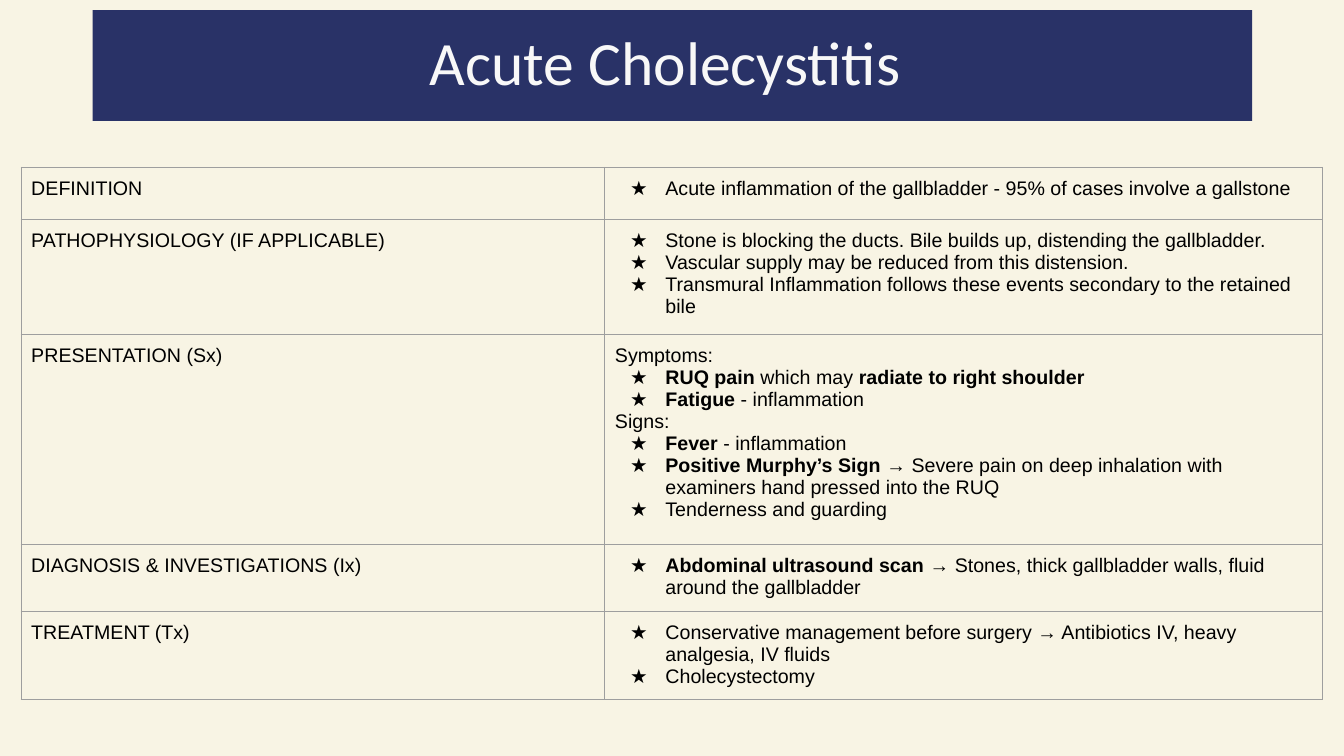
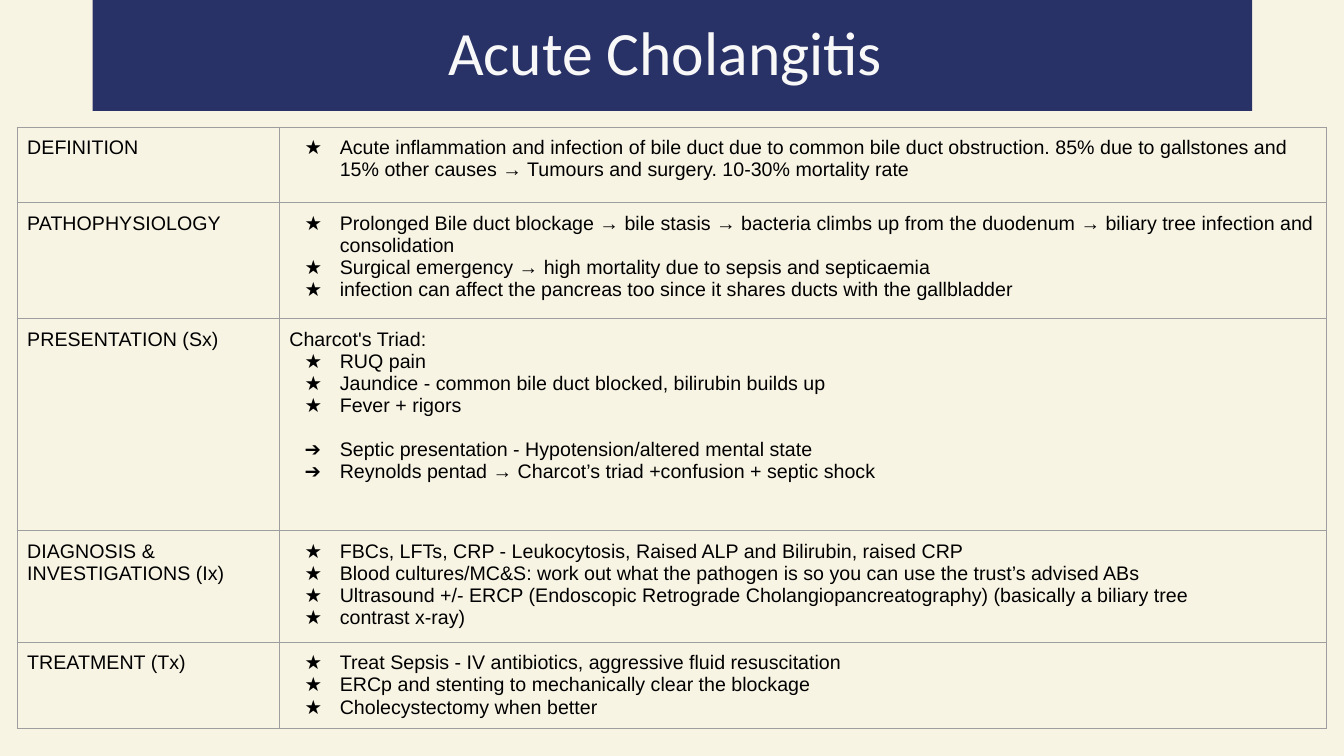
from lxml import etree
from pptx import Presentation
from pptx.dml.color import RGBColor
from pptx.enum.shapes import MSO_SHAPE
from pptx.enum.text import MSO_ANCHOR, PP_ALIGN
from pptx.oxml.ns import qn
from pptx.util import Inches, Pt

CREAM = RGBColor(0xF8, 0xF4, 0xE4)
NAVY = RGBColor(0x29, 0x32, 0x67)
OFF_WHITE = RGBColor(0xF8, 0xF8, 0xF8)
BLACK = RGBColor(0, 0, 0)
GREY = RGBColor(0x9E, 0x9E, 0x9E)

RECTANGLE = MSO_SHAPE.RECTANGLE
MIDDLE = MSO_ANCHOR.MIDDLE
CENTER = PP_ALIGN.CENTER
LEFT = PP_ALIGN.LEFT

PLAIN, STAR, ARROW = "", "★", "➔"
BOLD_MARK = "**"
GROUP_GAP = 16
BORDER_TAGS = ("a:lnL", "a:lnR", "a:lnT", "a:lnB")

CONDITIONS = [
    {
        "title": "Acute Cholecystitis ",
        "band_top": 0.1,
        "table_at": (0.21, 1.66),
        "columns": (5.79, 7.12),
        "rows": [
            (0.52, "DEFINITION", [
                (STAR, "Acute inflammation of the gallbladder - 95% of cases involve a gallstone"),
            ]),
            (1.14, "PATHOPHYSIOLOGY (IF APPLICABLE)", [
                (STAR, "Stone is blocking the ducts. Bile builds up, distending the gallbladder."),
                (STAR, "Vascular supply may be reduced from this distension."),
                (STAR, "Transmural Inflammation follows these events secondary to the retained bile"),
            ]),
            (2.08, "PRESENTATION (Sx)", [
                (PLAIN, "Symptoms:"),
                (STAR, "**RUQ pain** which may **radiate to right shoulder**"),
                (STAR, "**Fatigue** - inflammation"),
                (PLAIN, "Signs:"),
                (STAR, "**Fever** - inflammation"),
                (STAR, "**Positive Murphy’s Sign** → Severe pain on deep inhalation with "
                       "examiners hand pressed into the RUQ"),
                (STAR, "Tenderness and guarding"),
            ]),
            (0.67, "DIAGNOSIS & INVESTIGATIONS (Ix)", [
                (STAR, "**Abdominal ultrasound scan** → Stones, thick gallbladder walls, "
                       "fluid around the gallbladder"),
            ]),
            (0.87, "TREATMENT (Tx)", [
                (STAR, "Conservative management before surgery → Antibiotics IV, "
                       "heavy analgesia, IV fluids"),
                (STAR, "Cholecystectomy"),
            ]),
        ],
    },
    {
        "title": "Acute Cholangitis ",
        "band_top": 0,
        "table_at": (0.17, 1.26),
        "columns": (2.6, 10.39),
        "rows": [
            (0.75, "DEFINITION", [
                (STAR, "Acute inflammation and infection of bile duct due to common bile duct "
                       "obstruction. 85% due to gallstones and 15% other causes → Tumours and "
                       "surgery. 10-30% mortality rate"),
            ]),
            (1.15, "PATHOPHYSIOLOGY", [
                (STAR, "Prolonged Bile duct blockage → bile stasis → bacteria climbs up from "
                       "the duodenum → biliary tree infection and consolidation"),
                (STAR, "Surgical emergency → high mortality due to sepsis and septicaemia"),
                (STAR, "infection can affect the pancreas too since it shares ducts with the gallbladder"),
            ]),
            (2.1, "PRESENTATION (Sx)", [
                (PLAIN, "Charcot's Triad:"),
                (STAR, "RUQ pain"),
                (STAR, "Jaundice - common bile duct blocked, bilirubin builds up"),
                (STAR, "Fever + rigors"),
                (ARROW, "Septic presentation - Hypotension/altered mental state"),
                (ARROW, "Reynolds pentad → Charcot’s triad +confusion + septic shock"),
            ]),
            (1.11, "DIAGNOSIS & INVESTIGATIONS (Ix)", [
                (STAR, "FBCs, LFTs, CRP - Leukocytosis, Raised ALP and Bilirubin, raised CRP"),
                (STAR, "Blood cultures/MC&S: work out what the pathogen is so you can use "
                       "the trust’s advised ABs"),
                (STAR, "Ultrasound +/- ERCP (Endoscopic Retrograde Cholangiopancreatography) "
                       "(basically a biliary tree"),
                (STAR, "contrast x-ray)"),
            ]),
            (0.86, "TREATMENT (Tx)", [
                (STAR, "Treat Sepsis - IV antibiotics, aggressive fluid resuscitation"),
                (STAR, "ERCp and stenting to mechanically clear the blockage"),
                (STAR, "Cholecystectomy when better"),
            ]),
        ],
    },
]


def add_bullet(paragraph, symbol):
    properties = paragraph._p.get_or_add_pPr()
    properties.set("marL", str(Inches(0.5)))
    properties.set("indent", str(Inches(-0.35)))
    color = etree.SubElement(properties, qn("a:buClr"))
    etree.SubElement(color, qn("a:srgbClr"), val=str(BLACK))
    etree.SubElement(properties, qn("a:buFont"), typeface="Arial")
    etree.SubElement(properties, qn("a:buChar"), char=symbol)


def write(frame, lines, size=14, font="Arial", color=BLACK, align=LEFT, spacing=1.0):
    previous = None
    for index, (symbol, text) in enumerate(lines):
        paragraph = frame.add_paragraph() if index else frame.paragraphs[0]
        paragraph.alignment = align
        paragraph.line_spacing = spacing
        if symbol == ARROW and previous == STAR:
            paragraph.space_before = Pt(GROUP_GAP)
        if symbol:
            add_bullet(paragraph, symbol)
        for part, words in enumerate(text.split(BOLD_MARK)):
            if words:
                run = paragraph.add_run()
                run.text = words
                run.font.name = font
                run.font.size = Pt(size)
                run.font.color.rgb = color
                run.font.bold = part % 2 == 1
        previous = symbol


def add_borders(cell):
    properties = cell._tc.get_or_add_tcPr()
    for position, tag in enumerate(BORDER_TAGS):
        border = etree.Element(qn(tag), w=str(Pt(0.75)))
        fill = etree.SubElement(border, qn("a:solidFill"))
        etree.SubElement(fill, qn("a:srgbClr"), val=str(GREY))
        properties.insert(position, border)


def add_title_band(slide, title, top):
    band = slide.shapes.add_shape(RECTANGLE, Inches(0.92), Inches(top), Inches(11.5), Inches(1.1))
    band.shadow.inherit = False
    band.fill.solid()
    band.fill.fore_color.rgb = NAVY
    band.line.fill.background()
    frame = band.text_frame
    frame.word_wrap = True
    frame.vertical_anchor = MIDDLE
    write(frame, [(PLAIN, title)], size=44, font="Calibri", color=OFF_WHITE,
          align=CENTER, spacing=0.9)


def fill_cell(cell, lines):
    cell.margin_left = cell.margin_right = Inches(0.1)
    cell.margin_top = cell.margin_bottom = Inches(0.1)
    cell.fill.background()
    add_borders(cell)
    write(cell.text_frame, lines)


def add_summary(slide, table_at, columns, rows):
    left, top = table_at
    height = sum(row[0] for row in rows)
    summary = slide.shapes.add_table(len(rows), len(columns), Inches(left), Inches(top),
                                     Inches(sum(columns)), Inches(height)).table
    summary.first_row = False
    summary.horz_banding = False
    for column, width in zip(summary.columns, columns):
        column.width = Inches(width)
    for index, (row_height, heading, details) in enumerate(rows):
        summary.rows[index].height = Inches(row_height)
        fill_cell(summary.cell(index, 0), [(PLAIN, heading)])
        fill_cell(summary.cell(index, 1), details)


def main():
    deck = Presentation()
    deck.slide_width = Inches(13.33)
    deck.slide_height = Inches(7.5)
    background = deck.slide_master.background.fill
    background.solid()
    background.fore_color.rgb = CREAM
    for condition in CONDITIONS:
        slide = deck.slides.add_slide(deck.slide_layouts[6])
        add_title_band(slide, condition["title"], condition["band_top"])
        add_summary(slide, condition["table_at"], condition["columns"], condition["rows"])
    deck.save("out.pptx")


if __name__ == "__main__":
    main()
